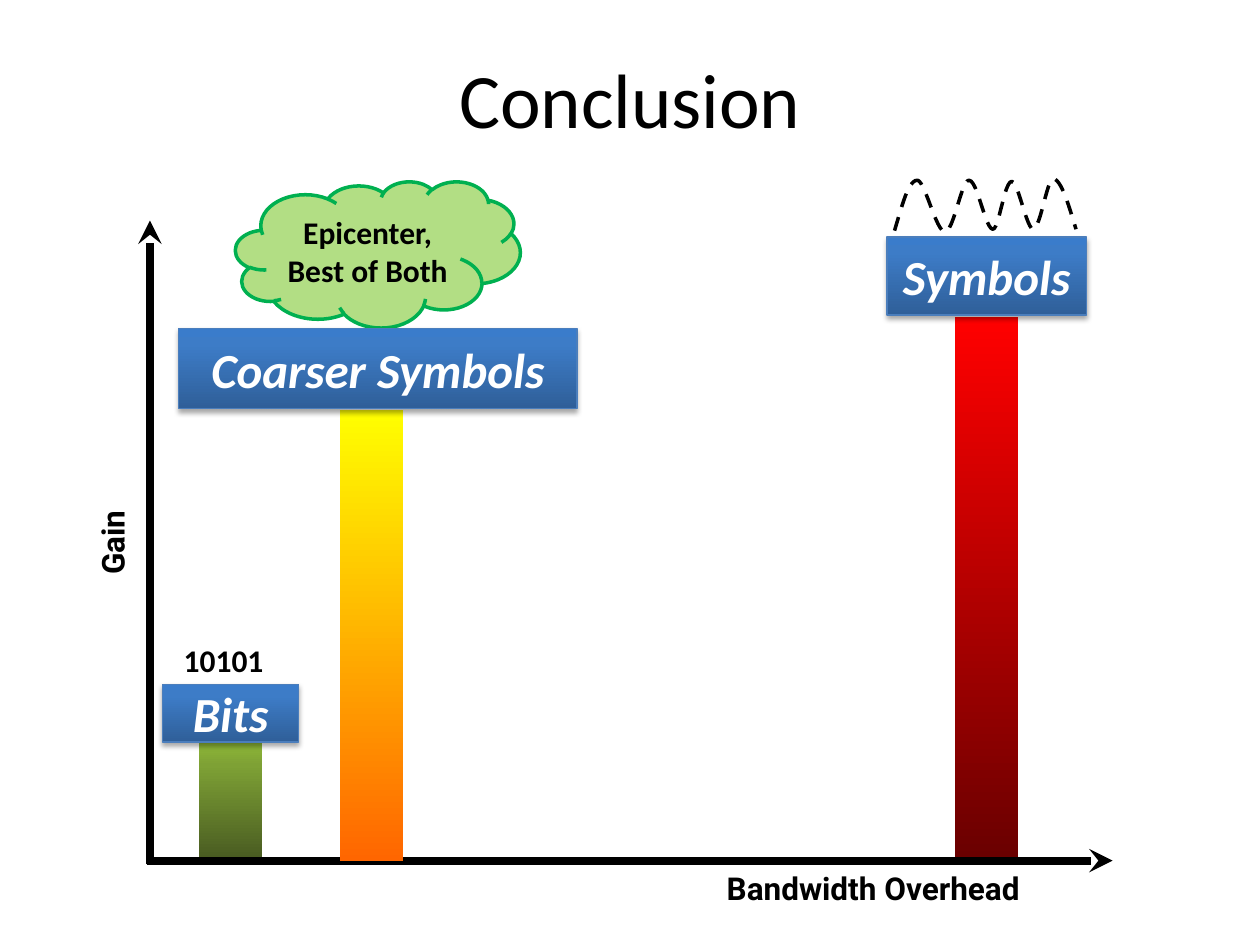
from lxml import etree
from pptx import Presentation
from pptx.dml.color import RGBColor
from pptx.enum.dml import MSO_LINE
from pptx.enum.shapes import MSO_CONNECTOR, MSO_SHAPE
from pptx.enum.text import MSO_ANCHOR, PP_ALIGN
from pptx.oxml.ns import qn
from pptx.util import Pt

RECTANGLE, CLOUD = MSO_SHAPE.RECTANGLE, MSO_SHAPE.CLOUD
STRAIGHT = MSO_CONNECTOR.STRAIGHT
DASH = MSO_LINE.DASH
MIDDLE = MSO_ANCHOR.MIDDLE
CENTER, LEFT = PP_ALIGN.CENTER, PP_ALIGN.LEFT
rgb = RGBColor.from_string


def gradient_block(box, stops):
    """Add a rectangle whose (percent, colour) stops run from bottom to top."""
    block = slide.shapes.add_shape(RECTANGLE, *map(Pt, box))
    block.shadow.inherit = False
    block.line.fill.background()
    block.fill.gradient()
    block.fill.gradient_angle = 90
    stop_list = block._element.spPr.find(".//" + qn("a:gsLst"))
    for old_stop in list(stop_list):
        stop_list.remove(old_stop)
    for percent, color in stops:
        stop = etree.SubElement(stop_list, qn("a:gs"), pos=str(percent * 1000))
        etree.SubElement(stop, qn("a:srgbClr"), val=color)
    return block


def write(holder, text, size, font="Calibri", color="000000", bold=True,
          italic=False, align=CENTER, wrap=True):
    frame = holder.text_frame
    frame.text = text
    frame.word_wrap = wrap
    frame.vertical_anchor = MIDDLE
    paragraph = frame.paragraphs[0]
    paragraph.alignment = align
    style = paragraph.runs[0].font
    style.name, style.size, style.bold, style.italic = font, Pt(size), bold, italic
    style.color.rgb = rgb(color)


prs = Presentation()
prs.slide_width, prs.slide_height = Pt(720), Pt(540)
slide = prs.slides.add_slide(prs.slide_layouts[6])

# Bars behind the axes
gradient_block((113.8, 423.4, 36, 68.4),
               [(0, "485A21"), (80, "7EA135"), (100, "8FB938")])
gradient_block((545.8, 181.4, 36, 309), [(0, "6A0000"), (100, "FF0000")])

# Axes
for ends in [(84.2, 491.8, 635.8, 491.8), (85.7, 493.9, 85.7, 126)]:
    axis = slide.shapes.add_connector(STRAIGHT, *map(Pt, ends))
    axis.line.color.rgb = rgb("000000")
    axis.line.width = Pt(4.5)
    etree.SubElement(axis.line._get_or_add_ln(), qn("a:tailEnd"), type="stealth")
    etree.SubElement(axis._element.spPr, qn("a:effectLst"))

# Coarser symbols bar, in front of the axis
gradient_block((194.4, 234, 36, 257.8), [(0, "FF6600"), (100, "FFFF00")])

# Cloud
cloud = slide.shapes.add_shape(CLOUD, Pt(134.6), Pt(103.7), Pt(162.7), Pt(83.5))
cloud.shadow.inherit = False
cloud.fill.solid()
cloud.fill.fore_color.rgb = rgb("92D050")
cloud_color = cloud._element.spPr.find(qn("a:solidFill")).find(qn("a:srgbClr"))
etree.SubElement(cloud_color, qn("a:alpha"), val="70000")
cloud.line.color.rgb = rgb("00B050")
cloud.line.width = Pt(2)
write(cloud, "Epicenter, Best of Both", 18)

# Bar captions
for caption, box in [
    ("Bits", (92.9, 391, 77.8, 33.1)),
    ("Symbols", (506.9, 135.4, 113.8, 44.6)),
    ("Coarser Symbols", (102.2, 187.9, 227.5, 45.4)),
]:
    plate = gradient_block(box, [(0, "2F5F99"), (80, "3D7CC7"), (100, "3A7CCB")])
    plate.line.color.rgb = rgb("4B7EBC")
    plate.line.width = Pt(0.75)
    shadow = etree.SubElement(
        plate._element.spPr.find(qn("a:effectLst")), qn("a:outerShdw"),
        blurRad=str(Pt(3.1)), dist=str(Pt(1.8)), dir="5400000", rotWithShape="0")
    shadow_color = etree.SubElement(shadow, qn("a:srgbClr"), val="000000")
    etree.SubElement(shadow_color, qn("a:alpha"), val="35000")
    write(plate, caption, 28, color="FFFFFF", italic=True, wrap=False)

# Plain labels
for label, box, font, rotation in [
    ("Gain", (37.4, 294.5, 53.3, 28.8), "Roboto", 270),
    ("Bandwidth Overhead", (408.2, 493.2, 194.4, 28.8), "Roboto", 0),
    ("10101", (97.9, 362.9, 60.5, 28.8), "Calibri", 0),
]:
    label_box = slide.shapes.add_textbox(*map(Pt, box))
    label_box.rotation = rotation
    write(label_box, label, 18, font, align=LEFT, wrap=False)

title = slide.shapes.add_textbox(Pt(36), Pt(21.6), Pt(648), Pt(68.4))
write(title, "Conclusion", 44, bold=False)

# Dashed signal wave: Bezier segments as (control, control, end)
wave_start = (511.2, 131.8)
wave_segments = [
    ((515.5, 117.4), (519.1, 103), (524.2, 103)),
    ((528.5, 103), (535, 132.5), (540, 132.5)),
    ((545, 132.5), (549.4, 103), (553.7, 103)),
    ((558.7, 103), (563, 131), (567.4, 131)),
    ((571, 131), (573.8, 103.7), (578.2, 103.7)),
    ((581.8, 103.7), (586.8, 131), (590.4, 131)),
    ((594.7, 130.3), (598.3, 102.2), (601.9, 102.2)),
    ((606.2, 102.2), (610.6, 116.6), (614.9, 131)),
]
STEPS = 12
wave_points = []
here = wave_start
for first, second, end in wave_segments:
    for step in range(1, STEPS + 1):
        t = step / STEPS
        u = 1 - t
        wave_points.append(tuple(
            Pt(u**3 * a + 3 * u * u * t * b + 3 * u * t * t * c + t**3 * d)
            for a, b, c, d in zip(here, first, second, end)))
    here = end
builder = slide.shapes.build_freeform(*map(Pt, wave_start))
builder.add_line_segments(wave_points, close=False)
wave = builder.convert_to_shape()
wave.shadow.inherit = False
wave.fill.background()
wave.line.color.rgb = rgb("000000")
wave.line.width = Pt(2)
wave.line.dash_style = DASH

prs.save("out.pptx")
